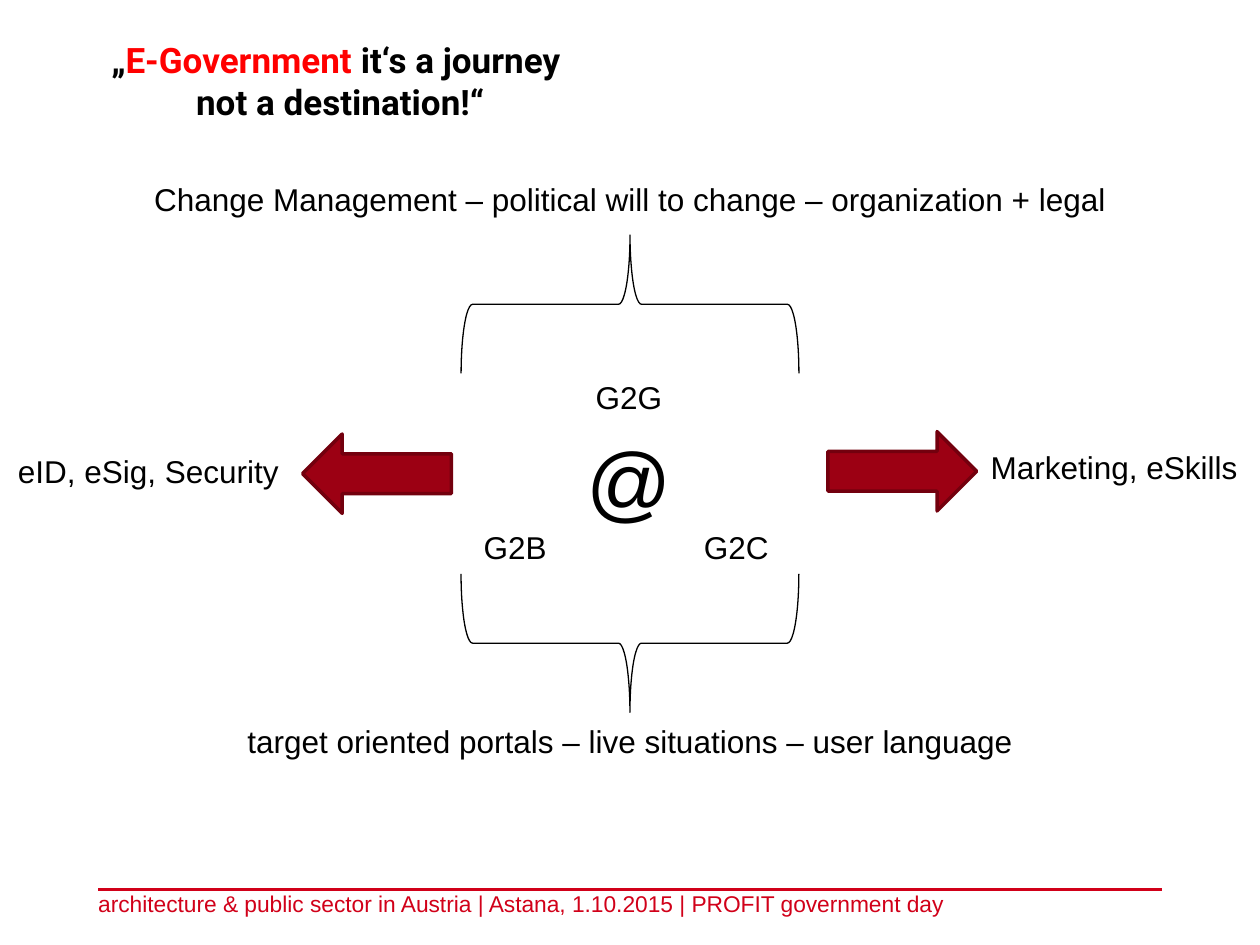
import pptx
import pptx.util
import pptx.dml.color
import pptx.enum.shapes
import pptx.enum.text
import pptx.oxml.ns
from lxml import etree

Cm, Pt = pptx.util.Cm, pptx.util.Pt
SHAPE = pptx.enum.shapes.MSO_SHAPE
ALIGN = pptx.enum.text.PP_ALIGN
FIT = pptx.enum.text.MSO_AUTO_SIZE

COLORS = {"text": "000000", "accent": "FF0000", "footer": "D10019",
          "arrow": "9C0013", "arrow_edge": "73000E"}
LABEL = {"name": "Arial", "size": Pt(18)}
SYMBOL = {"name": "Arial", "size": Pt(48)}
TITLE = {"name": "Roboto", "size": Pt(20), "bold": True}
FOOTER = {"name": "Arial", "size": Pt(13)}


def rgb(name):
    return pptx.dml.color.RGBColor.from_string(COLORS[name])


def add_text(s, box, lines, font, align=ALIGN.CENTER, **frame):
    tf = s.shapes.add_textbox(*map(Cm, box)).text_frame
    for name, value in frame.items():
        setattr(tf, name, value)
    for i, line in enumerate(lines):
        p = tf.add_paragraph() if i else tf.paragraphs[0]
        p.alignment = align
        for text, color in line:
            r = p.add_run()
            r.text = text
            for name, value in font.items():
                setattr(r.font, name, value)
            r.font.color.rgb = rgb(color)


def add_label(s, x, y, w, text, font=LABEL, h=1.02, align=ALIGN.CENTER):
    add_text(s, (x, y, w, h), [[(text, "text")]], font, align,
             word_wrap=False, auto_size=FIT.SHAPE_TO_FIT_TEXT)


def add_outlined(s, kind, box, rotation, edge, width, fill=None):
    sp = s.shapes.add_shape(kind, *map(Cm, box))
    sp.shadow.inherit = False
    sp.rotation = rotation
    sp.line.color.rgb = rgb(edge)
    sp.line.width = Pt(width)
    if fill:
        sp.fill.solid()
        sp.fill.fore_color.rgb = rgb(fill)
    else:
        sp.fill.background()


def add_title(s, x, y, w, h):
    lines = [[("„", "text"), ("E-Government", "accent"), (" it‘s a journey ", "text")],
             [("not a destination!“", "text")]]
    add_text(s, (x, y, w, h), lines, TITLE, word_wrap=True,
             auto_size=FIT.SHAPE_TO_FIT_TEXT)


def add_diagram(s, x, y, w, h):
    mid = x + w / 2

    for top, width, text in [
        (y, 19.86, "Change Management – political will to change – organization + legal"),
        (y + h - 1.02, 16.08, "target oriented portals – live situations – user language"),
    ]:
        add_label(s, mid - width / 2, top, width, text)

    depth, span = 2.79, 6.81
    for top, rotation in [(y + 1.23, 90), (y + 8.06, 270)]:
        box = (mid - depth / 2, top + (depth - span) / 2, depth, span)
        add_outlined(s, SHAPE.LEFT_BRACE, box, rotation, "text", 0.75)

    for left, top, rotation in [(x + 6.1, y + 5.24, 0), (x + 16.69, y + 5.19, 180)]:
        add_outlined(s, SHAPE.LEFT_ARROW, (left, top, 3, 1.6), rotation,
                     "arrow_edge", 2, "arrow")

    add_label(s, x + 0.08, y + 5.47, 5.82, "eID, eSig, Security")
    add_label(s, x + 19.69, y + 5.39, 5.54, "Marketing, eSkills")

    for left, top, width, text in [(11.76, 3.98, 1.88, "G2G"),
                                   (9.5, 7.01, 1.83, "G2B"),
                                   (13.94, 7.01, 1.83, "G2C")]:
        add_label(s, x + left, y + top, width, text, align=ALIGN.LEFT)
    add_label(s, x + 11.58, y + 5.01, 2.26, "@", SYMBOL, 2.31, ALIGN.LEFT)


def add_footer(s, x, y, w, h):
    rule = s.shapes.add_connector(pptx.enum.shapes.MSO_CONNECTOR.STRAIGHT,
                                  Cm(x), Cm(y), Cm(x + w), Cm(y))
    rule.line.color.rgb = rgb("footer")
    rule.line.width = Pt(1.5)
    etree.SubElement(rule._element.spPr, pptx.oxml.ns.qn("a:effectLst"))
    text = "architecture & public sector in Austria | Astana, 1.10.2015 | PROFIT government day"
    margins = {f"margin_{side}": 0 for side in ("left", "top", "right", "bottom")}
    add_text(s, (x, y, 18.06, h), [[(text, "footer")]], FOOTER, ALIGN.LEFT,
             word_wrap=True, **margins)


def main():
    prs = pptx.Presentation()
    prs.slide_width, prs.slide_height = Cm(25.4), Cm(19.05)
    s = prs.slides.add_slide(prs.slide_layouts[6])
    add_title(s, 0.51, 0.66, 12.7, 1.96)
    add_diagram(s, 0, 3.51, 25.4, 11.94)
    add_footer(s, 1.98, 17.93, 21.44, 0.56)
    prs.save("out.pptx")


if __name__ == "__main__":
    main()
